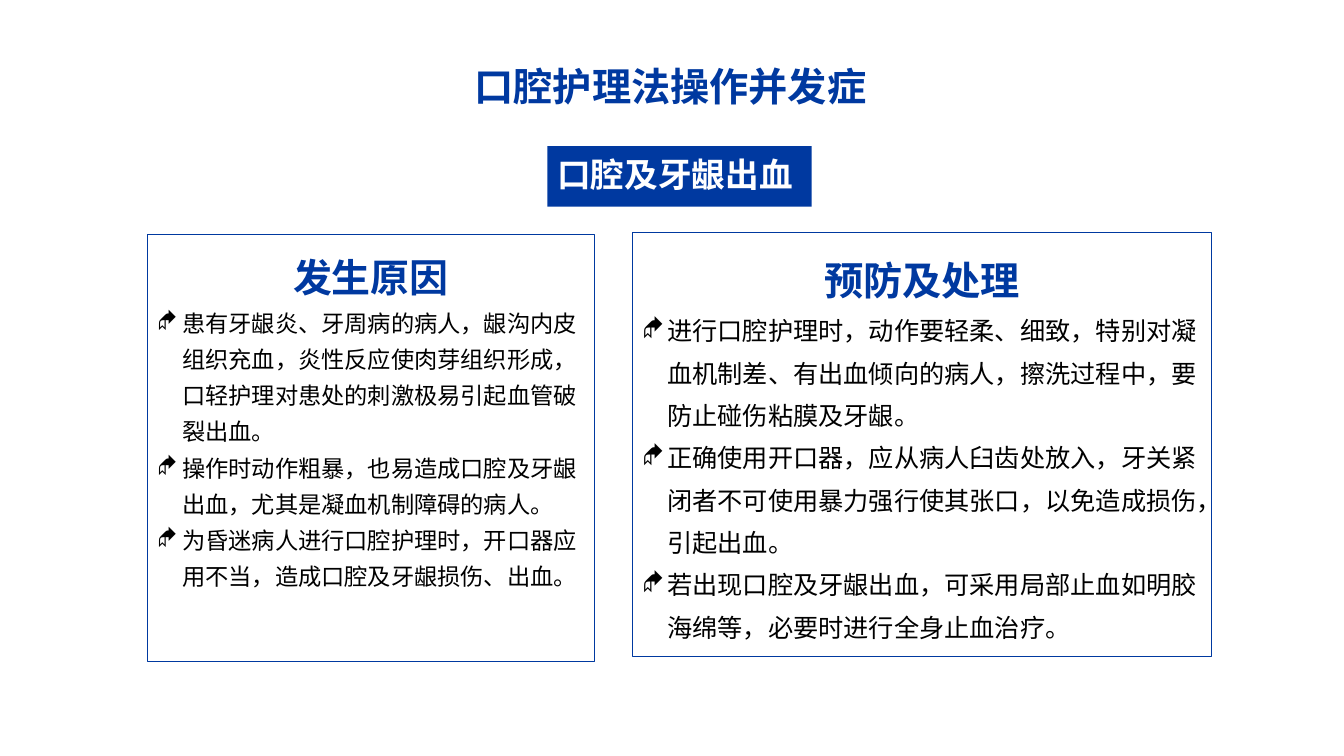
from lxml import etree
from pptx import Presentation
from pptx.dml.color import RGBColor
from pptx.enum.shapes import MSO_SHAPE
from pptx.enum.text import MSO_ANCHOR, PP_ALIGN
from pptx.oxml.ns import qn
from pptx.util import Inches, Pt

FONT = "Noto Sans CJK SC"
BLUE, BLACK, WHITE = "0039A0", "000000", "FFFFFF"

TITLE = "口腔护理法操作并发症"
BANNER = "口腔及牙龈出血"
PANELS = [
    {
        "box": (1.46, 2.33, 4.44, 4.23),
        "heading": "发生原因",
        "sizes": (27.8, 16.6),
        "spacing": 1.3,
        "points": [
            "患有牙龈炎、牙周病的病人，龈沟内皮组织充血，炎性反应使肉芽组织形成，口轻护理对患处的刺激极易引起血管破裂出血。",
            "操作时动作粗暴，也易造成口腔及牙龈出血，尤其是凝血机制障碍的病人。",
            "为昏迷病人进行口腔护理时，开口器应用不当，造成口腔及牙龈损伤、出血。",
        ],
    },
    {
        "box": (6.27, 2.31, 5.75, 4.2),
        "heading": "预防及处理",
        "sizes": (28, 18),
        "spacing": 1.4,
        "points": [
            "进行口腔护理时，动作要轻柔、细致，特别对凝血机制差、有出血倾向的病人，擦洗过程中，要防止碰伤粘膜及牙龈。",
            "正确使用开口器，应从病人臼齿处放入，牙关紧闭者不可使用暴力强行使其张口，以免造成损伤，引起出血。",
            "若出现口腔及牙龈出血，可采用局部止血如明胶海绵等，必要时进行全身止血治疗。",
        ],
    },
]


def rgb(color):
    return RGBColor.from_string(color)


def write(paragraph, text, size, color, bold, spacing, align):
    paragraph.text = text
    paragraph.alignment = align
    paragraph.line_spacing = spacing
    paragraph.space_before = paragraph.space_after = Pt(0)
    for run in paragraph.runs:
        run.font.name = FONT
        run.font.size = Pt(size)
        run.font.bold = bold
        run.font.color.rgb = rgb(color)
        latin = run.font._element.find(qn("a:latin"))
        east_asian = etree.Element(qn("a:ea"), typeface=FONT)
        latin.addnext(east_asian)


def add_bullet(paragraph):
    properties = paragraph._p.get_or_add_pPr()
    properties.set("marL", str(Inches(0.25)))
    properties.set("indent", str(Inches(-0.25)))
    etree.SubElement(properties, qn("a:buFont"), typeface="Wingdings")
    etree.SubElement(properties, qn("a:buChar"), char="◆")


def add_box(slide, box, anchor, fill=None, line=None):
    shape = slide.shapes.add_shape(MSO_SHAPE.RECTANGLE, *map(Inches, box))
    shape.shadow.inherit = False
    if fill:
        shape.fill.solid()
        shape.fill.fore_color.rgb = rgb(fill)
    else:
        shape.fill.background()
    if line:
        shape.line.color.rgb = rgb(line)
        shape.line.width = Pt(0.75)
    else:
        shape.line.fill.background()
    shape.text_frame.word_wrap = True
    shape.text_frame.vertical_anchor = anchor
    return shape


def add_panel(slide, panel):
    shape = add_box(slide, panel["box"], MSO_ANCHOR.TOP, line=BLUE)
    heading_size, point_size = panel["sizes"]
    spacing = panel["spacing"]
    text_frame = shape.text_frame
    write(text_frame.paragraphs[0], panel["heading"], heading_size, BLUE, True,
          spacing, PP_ALIGN.CENTER)
    for point in panel["points"]:
        paragraph = text_frame.add_paragraph()
        write(paragraph, point, point_size, BLACK, False, spacing, PP_ALIGN.LEFT)
        add_bullet(paragraph)


def main():
    presentation = Presentation()
    presentation.slide_width = Inches(13.33)
    presentation.slide_height = Inches(7.5)
    slide = presentation.slides.add_slide(presentation.slide_layouts[5])

    title = slide.shapes.title
    title.left, title.top, title.width, title.height = map(
        Inches, (2.4, 0.56, 8.5, 0.64))
    title.text_frame.vertical_anchor = MSO_ANCHOR.MIDDLE
    write(title.text_frame.paragraphs[0], TITLE, 28, BLUE, True, 0.9, PP_ALIGN.CENTER)

    for panel in PANELS:
        add_panel(slide, panel)

    banner = add_box(slide, (5.43, 1.45, 2.62, 0.6), MSO_ANCHOR.MIDDLE, fill=BLUE)
    write(banner.text_frame.paragraphs[0], BANNER, 24, WHITE, True, 0.9, PP_ALIGN.LEFT)

    presentation.save("out.pptx")


if __name__ == "__main__":
    main()
